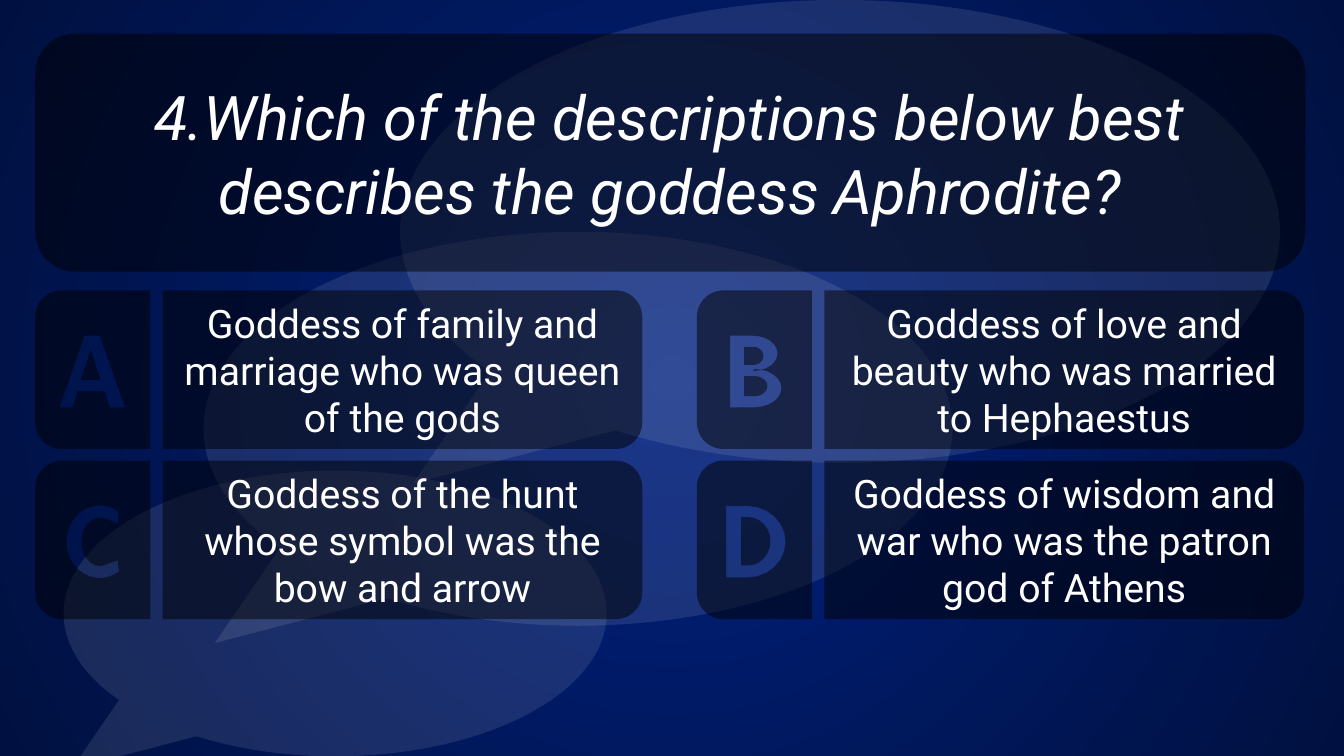
import math

from lxml import etree
from pptx import Presentation
from pptx.dml.color import RGBColor
from pptx.enum import shapes, text
from pptx.oxml import ns
from pptx.util import Pt

NAVY = RGBColor(0x00, 0x21, 0x7F)
MIDNIGHT = RGBColor(0x00, 0x10, 0x40)
BLACK = RGBColor(0x00, 0x00, 0x00)
WHITE = RGBColor(0xFF, 0xFF, 0xFF)
FONT = "Roboto"

LEFT, TOP, ROW_STEP, COL_STEP = 25.2, 207.4, 121.6, 472.6
TAB_W, PANEL_DX, PANEL_W, ROW_H, RADIUS = 82.2, 91, 342.6, 113.3, 19
LETTER_UNIT = 0.72
CAP, BASE = 45, 116

QUESTION = "4.Which of the descriptions below best describes the goddess Aphrodite?"
ANSWERS = {
    "A": "Goddess of family and marriage who was queen of the gods",
    "B": "Goddess of love and beauty who was married to Hephaestus",
    "C": "Goddess of the hunt whose symbol was the bow and arrow",
    "D": "Goddess of wisdom and war who was the patron god of Athens",
}
CALLOUTS = [(45.4, 336.2, 388), (145.4, 165.6, 535), (285.8, 0, 628.6)]
CALLOUT_RATIO = 0.526


def arc(cx, cy, rx, ry, start, end, steps=12):
    angles = [math.radians(start + (end - start) * i / steps) for i in range(steps + 1)]
    return [(cx + rx * math.cos(a), cy + ry * math.sin(a)) for a in angles]


def bowl(left, turn, right, top, bottom):
    ry = (bottom - top) / 2
    curve = arc(turn, top + ry, right - turn, ry, -90, 90)
    return [(left, top)] + curve + [(left, bottom)]


def letter_a():
    body = [(24, BASE), (49, CAP), (64, CAP), (89, BASE),
            (74, BASE), (69, 100), (42, 100), (37, BASE)]
    return [body, [(55, 59), (65, 89), (45, 89)]]


def letter_b():
    body = bowl(33, 56, 80, CAP, 80)[:-1] + bowl(33, 57, 84, 78, BASE)[1:]
    return [body, bowl(47, 56, 66, 56, 74), bowl(47, 57, 70, 85, 105)]


def letter_c():
    middle = (CAP + BASE) / 2
    outer = arc(64, middle, 33, 36, -55, -305, 24)
    inner = arc(64, middle, 18, 24, 70, 290, 24)
    return [outer + [(82, 99)] + inner + [(82, 62)]]


def letter_d():
    return [bowl(29, 50, 88, CAP, BASE), bowl(44, 51, 73, 56, 104)]


LETTERS = {"A": letter_a, "B": letter_b, "C": letter_c, "D": letter_d}


def set_background(s):
    fill = s.background.fill
    fill.gradient()
    for stop, color, pos in zip(fill.gradient_stops, (NAVY, MIDNIGHT), (0, 1)):
        stop.color.rgb = color
        stop.position = pos
    grad = s.element.find(".//" + ns.qn("a:gradFill"))
    grad.remove(grad.find(ns.qn("a:lin")))
    circle = etree.SubElement(grad, ns.qn("a:path"), path="circle")
    etree.SubElement(circle, ns.qn("a:fillToRect"), dict.fromkeys("ltrb", "50000"))


def tint(sp, color, opacity):
    sp.shadow.inherit = False
    sp.line.fill.background()
    sp.fill.solid()
    sp.fill.fore_color.rgb = color
    clr = sp.element.spPr.find(".//" + ns.qn("a:srgbClr"))
    etree.SubElement(clr, ns.qn("a:alpha"), val=str(opacity * 1000))


def write(sp, words, size, italic=None):
    tf = sp.text_frame
    tf.word_wrap = True
    tf.auto_size = text.MSO_AUTO_SIZE.NONE
    tf.vertical_anchor = text.MSO_ANCHOR.MIDDLE
    p = tf.paragraphs[0]
    p.alignment = text.PP_ALIGN.CENTER
    r = p.add_run()
    r.text = words
    r.font.name = FONT
    r.font.size = Pt(size)
    r.font.italic = italic
    r.font.color.rgb = WHITE


def add_callouts(s):
    group = s.shapes.add_group_shape()
    for x, y, w in CALLOUTS:
        sp = group.shapes.add_shape(shapes.MSO_SHAPE.OVAL_CALLOUT,
                                    Pt(x), Pt(y), Pt(w), Pt(w * CALLOUT_RATIO))
        sp.adjustments[0] = -0.485
        sp.adjustments[1] = 0.544
        tint(sp, WHITE, 10)


def half_rounded(square_x, round_x, y):
    side = math.copysign(RADIUS, round_x - square_x)
    upper = arc(round_x - side, y + RADIUS, side, RADIUS, -90, 0)
    lower = arc(round_x - side, y + ROW_H - RADIUS, side, RADIUS, 0, 90)
    return [(square_x, y)] + upper + lower + [(square_x, y + ROW_H)]


def add_outline(s, contours):
    first, *holes = [[(Pt(x), Pt(y)) for x, y in c] for c in contours]
    builder = s.shapes.build_freeform(*first[0])
    builder.add_line_segments(first[1:])
    for hole in holes:
        builder.move_to(*hole[0])
        builder.add_line_segments(hole[1:])
    sp = builder.convert_to_shape()
    tint(sp, BLACK, 50)
    return sp


def add_answer(s, letter, words, x, y):
    panel_x = x + PANEL_DX
    panel = add_outline(s, [half_rounded(panel_x, panel_x + PANEL_W, y)])
    write(panel, words, 28)
    cutouts = [[(x + LETTER_UNIT * px, y + LETTER_UNIT * py) for px, py in c]
               for c in LETTERS[letter]()]
    add_outline(s, [half_rounded(x + TAB_W, x, y)] + cutouts)


def add_question(s):
    box = [Pt(v) for v in (LEFT, 24, 907.2, 170)]
    tint(s.shapes.add_shape(shapes.MSO_SHAPE.ROUNDED_RECTANGLE, *box), BLACK, 50)
    title = s.shapes.title
    title.left, title.top, title.width, title.height = box
    write(title, QUESTION, 44, italic=True)
    s.shapes.element.append(title.element)


def main():
    prs = Presentation()
    prs.slide_width, prs.slide_height = Pt(960), Pt(540)
    s = prs.slides.add_slide(prs.slide_layouts[5])
    set_background(s)
    add_callouts(s)
    for i, (letter, words) in enumerate(ANSWERS.items()):
        row, col = divmod(i, 2)
        add_answer(s, letter, words, LEFT + col * COL_STEP, TOP + row * ROW_STEP)
    add_question(s)
    prs.save("out.pptx")


if __name__ == "__main__":
    main()
